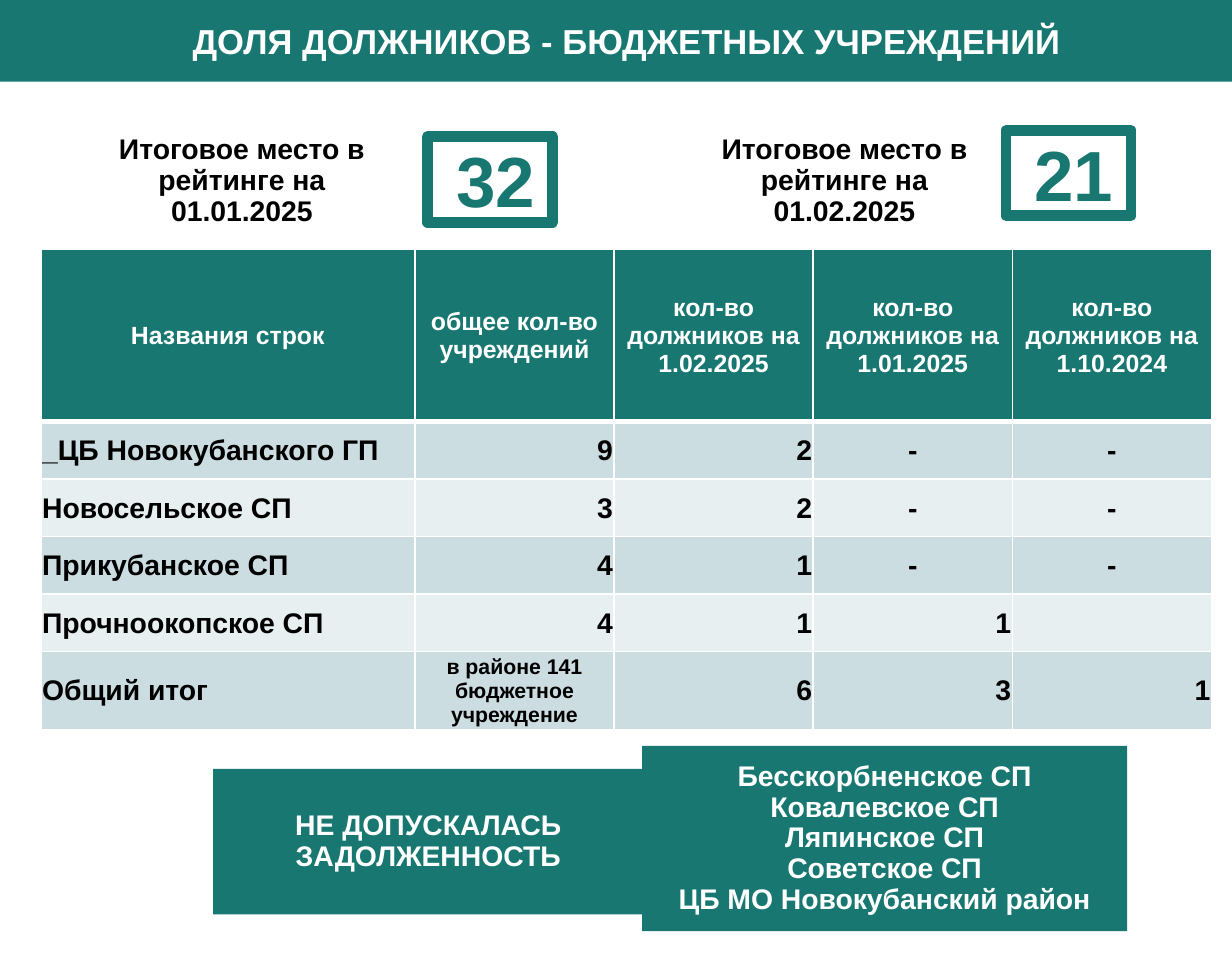
from lxml.etree import SubElement
from pptx import Presentation
from pptx.dml.color import RGBColor
from pptx.enum.shapes import MSO_SHAPE as Preset
from pptx.enum.text import MSO_ANCHOR as Anchor, MSO_AUTO_SIZE as AutoSize, PP_ALIGN as Align
from pptx.oxml.ns import qn
from pptx.util import Pt

EMU_PER_PX = 9144  # 100 px to the inch
COLOURS = {"teal": "187771", "white": "FFFFFF", "black": "000000",
           "band_dark": "CCDDE1", "band_light": "E7EFF1"}
SIDES = ("left", "right", "top", "bottom")
TIGHT = (7, 7, 4, 4)


def px(*lengths):
    return [length * EMU_PER_PX for length in lengths]


def colour(name):
    return RGBColor.from_string(COLOURS[name])


class SlideBuilder:
    """Holds the text style and the slide that is being filled."""

    def __init__(self, slide):
        self.shapes = slide.shapes
        self.font_style = {"name": "Arial", "bold": True}

    def fill_text(self, frame, lines, size, ink, align=Align.CENTER, spacing=None):
        frame.text = "\n".join(lines)
        for paragraph in frame.paragraphs:
            paragraph.alignment = align
            paragraph.line_spacing = spacing
            for name, value in {**self.font_style, "size": Pt(size)}.items():
                setattr(paragraph.font, name, value)
                for run in paragraph.runs:
                    setattr(run.font, name, value)
            for run in paragraph.runs:
                run.font.color.rgb = colour(ink)

    def set_frame(self, frame, insets, **formats):
        margins = {f"margin_{side}": inset for side, inset in zip(SIDES, px(*insets))}
        for name, value in {"word_wrap": True, **margins, **formats}.items():
            setattr(frame, name, value)

    def text(self, box, lines, size, ink, insets=TIGHT, spacing=0.9, **formats):
        frame = self.shapes.add_textbox(*px(*box)).text_frame
        self.set_frame(frame, insets, **formats)
        self.fill_text(frame, lines, size, ink, spacing=spacing)

    def panel(self, box, lines=()):
        panel = self.shapes.add_shape(Preset.RECTANGLE, *px(*box))
        panel.shadow.inherit = False
        panel.fill.solid()
        panel.fill.fore_color.rgb = colour("teal")
        panel.line.fill.background()
        if lines:
            self.set_frame(panel.text_frame, TIGHT, vertical_anchor=Anchor.MIDDLE)
            self.fill_text(panel.text_frame, lines, 16, "white", spacing=0.9)

    def rank(self, left, top, place):
        # The left inset moves the number right of the middle
        self.text((left, top, 99, 77), [place], 40, "teal", insets=(25, 10, 5, 5),
                  spacing=None, auto_size=AutoSize.SHAPE_TO_FIT_TEXT)
        border = self.shapes.add_shape(Preset.RECTANGLE, *px(left + 4, top + 5, 98, 67))
        border.shadow.inherit = False
        border.fill.background()
        border.line.color.rgb = colour("teal")
        border.line.width = Pt(6)

    def cell_borders(self, cell, widths):
        properties = cell._tc.get_or_add_tcPr()
        for side, width in zip("LRTB", widths):
            line = SubElement(properties, qn(f"a:ln{side}"), w=str(Pt(width)))
            SubElement(SubElement(line, qn("a:solidFill")), qn("a:srgbClr"),
                       val=COLOURS["white"])

    def table(self, left, top, widths, heights, rows):
        box = px(left, top, sum(widths), sum(heights))
        table = self.shapes.add_table(len(rows), len(widths), *box).table
        for column, width in zip(table.columns, px(*widths)):
            column.width = width
        for row, height in zip(table.rows, px(*heights)):
            row.height = height
        for r, values in enumerate(rows):
            for c, value in enumerate(values):
                self.table_cell(table.cell(r, c), r, c, value)

    def table_cell(self, cell, r, c, value):
        fill, ink, size, align = "band_dark" if r % 2 else "band_light", "black", 16, Align.CENTER
        if r == 0:
            fill, ink, size = "teal", "white", 14
        elif c == 0:
            align = Align.LEFT
        elif value.isdigit():
            align = Align.RIGHT
        elif len(value) > 1:
            size = 12
        self.cell_borders(cell, (1, 1, 3 if r == 1 else 1, 3 if r == 0 else 1))
        cell.fill.solid()
        cell.fill.fore_color.rgb = colour(fill)
        cell.vertical_anchor = Anchor.MIDDLE
        for side, inset in zip(SIDES, px(1, 1, 1, 0)):
            setattr(cell, f"margin_{side}", inset)
        self.fill_text(cell.text_frame, [value], size, ink, align)


DEBTORS = [
    ["Названия строк", "общее кол-во учреждений"]
    + [f"кол-во должников на {date}" for date in ("1.02.2025", "1.01.2025", "1.10.2024")],
    ["_ЦБ Новокубанского ГП", "9", "2", "-", "-"],
    ["Новосельское СП", "3", "2", "-", "-"],
    ["Прикубанское СП", "4", "1", "-", "-"],
    ["Прочноокопское СП", "4", "1", "1", ""],
    ["Общий итог", "в районе 141 бюджетное учреждение", "6", "3", "1"],
]
DEBT_FREE = ["Бесскорбненское СП", "Ковалевское СП", "Ляпинское СП", "Советское СП",
             "ЦБ МО Новокубанский район"]


def main():
    deck = Presentation()
    deck.slide_width, deck.slide_height = px(965, 750)
    page = SlideBuilder(deck.slides.add_slide(deck.slide_layouts[6]))

    # Title band
    page.panel((0, -2, 965, 66))
    page.text((53, 2, 876, 64), ["ДОЛЯ ДОЛЖНИКОВ - БЮДЖЕТНЫХ УЧРЕЖДЕНИЙ"], 19.5, "white",
              vertical_anchor=Anchor.MIDDLE)

    # Places in the rating
    for left, width, date in ((535, 253, "01.02.2025"), (66, 247, "01.01.2025")):
        page.text((left, 110, width, 64), [f"Итоговое место в рейтинге на {date}"], 16,
                  "black", vertical_anchor=Anchor.MIDDLE)
    page.rank(331, 102, "32")
    page.rank(784, 97, "21")

    # Institutions without debt
    page.panel((167, 602, 337, 114), ["НЕ ДОПУСКАЛАСЬ ЗАДОЛЖЕННОСТЬ"])
    page.panel((503, 584, 380, 145), DEBT_FREE)

    # Debtors by settlement
    page.table(32, 195, [293] + [156] * 4, [135] + [45] * 4 + [61], DEBTORS)

    deck.save("out.pptx")


if __name__ == "__main__":
    main()
